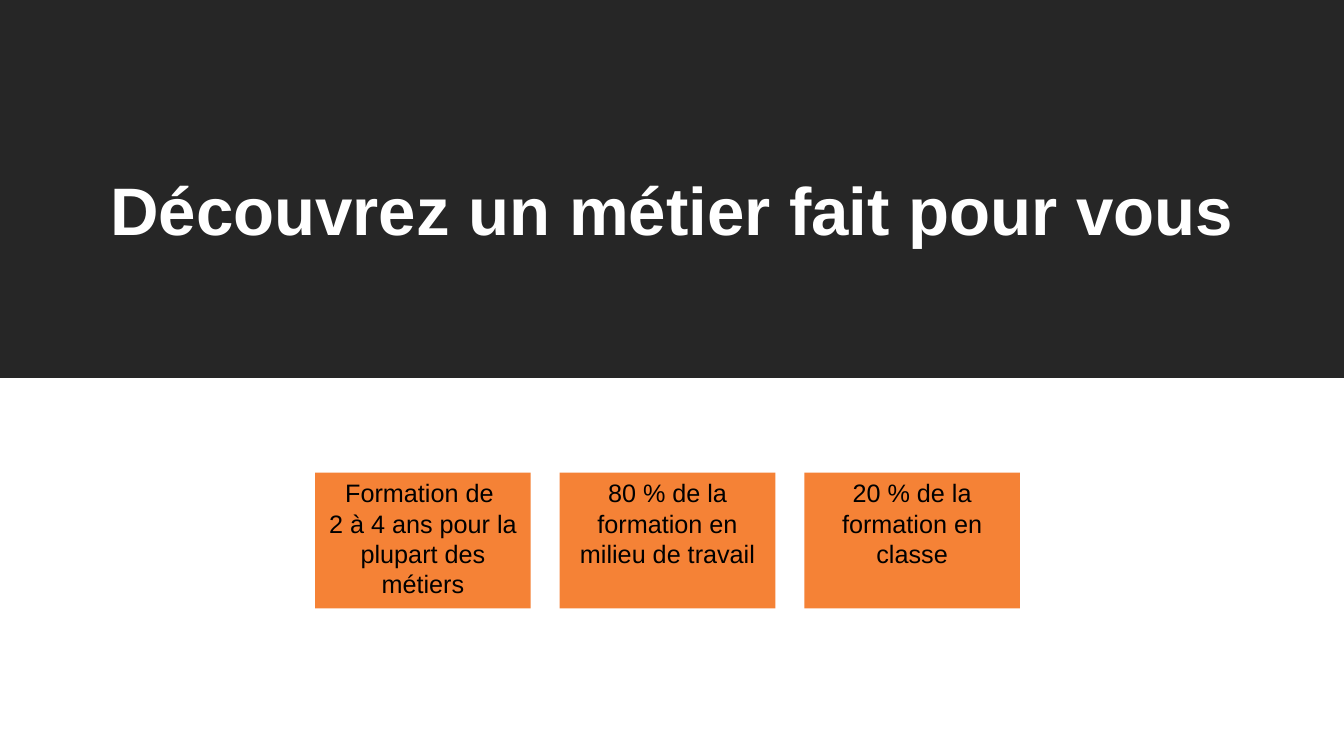
from dataclasses import dataclass

from lxml import etree
from pptx import Presentation
from pptx.dml.color import RGBColor
from pptx.enum.shapes import MSO_SHAPE
from pptx.enum.text import MSO_ANCHOR, PP_ALIGN
from pptx.oxml.ns import qn
from pptx.util import Pt


@dataclass(frozen=True)
class Theme:
    font: str = "Arial"
    band: RGBColor = RGBColor(0, 0, 0)
    band_opacity: int = 85
    card: RGBColor = RGBColor(0xF5, 0x82, 0x36)
    title_text: RGBColor = RGBColor(255, 255, 255)
    card_text: RGBColor = RGBColor(0, 0, 0)
    title_size: int = 48
    card_size: int = 18


THEME = Theme()
PAGE_WIDTH, PAGE_HEIGHT = 960, 540
CARD_LEFT, CARD_TOP = 225.1, 337.7
CARD_WIDTH, CARD_HEIGHT = 154, 97
CARD_PITCH = 174.7
CARDS = [
    "Formation de \v2 à 4 ans pour la plupart des métiers",
    "80 % de la formation en milieu de travail",
    "20 % de la formation en classe",
]


def write_text(box, text, size, color, anchor, bold=False):
    frame = box.text_frame
    frame.word_wrap = True
    frame.vertical_anchor = anchor
    frame.text = text
    for para in frame.paragraphs:
        para.alignment = PP_ALIGN.CENTER
        for span in para.runs:
            span.font.name = THEME.font
            span.font.size = Pt(size)
            span.font.bold = bold
            span.font.color.rgb = color


def add_rectangle(page, left, top, width, height, color):
    box = page.shapes.add_shape(
        MSO_SHAPE.RECTANGLE, Pt(left), Pt(top), Pt(width), Pt(height)
    )
    box.shadow.inherit = False
    box.fill.solid()
    box.fill.fore_color.rgb = color
    box.line.fill.background()
    return box


def set_opacity(box, percent):
    color = box.fill._xPr.find(qn("a:solidFill"))[0]
    etree.SubElement(color, qn("a:alpha")).set("val", str(percent * 1000))


def add_band(page):
    band = add_rectangle(page, 0, 0, PAGE_WIDTH, PAGE_HEIGHT / 2, THEME.band)
    set_opacity(band, THEME.band_opacity)


def add_title(page, text):
    box = page.shapes.add_textbox(Pt(69.8), Pt(105.1), Pt(820.8), Pt(87.8))
    write_text(box, text, THEME.title_size, THEME.title_text, MSO_ANCHOR.MIDDLE, True)


def add_card(page, left, text):
    card = add_rectangle(page, left, CARD_TOP, CARD_WIDTH, CARD_HEIGHT, THEME.card)
    write_text(card, text, THEME.card_size, THEME.card_text, MSO_ANCHOR.TOP)


def main():
    deck = Presentation()
    deck.slide_width, deck.slide_height = Pt(PAGE_WIDTH), Pt(PAGE_HEIGHT)
    page = deck.slides.add_slide(deck.slide_layouts[6])
    add_band(page)
    add_title(page, "Découvrez un métier fait pour vous")
    for index, text in enumerate(CARDS):
        add_card(page, CARD_LEFT + index * CARD_PITCH, text)
    deck.save("out.pptx")


if __name__ == "__main__":
    main()
